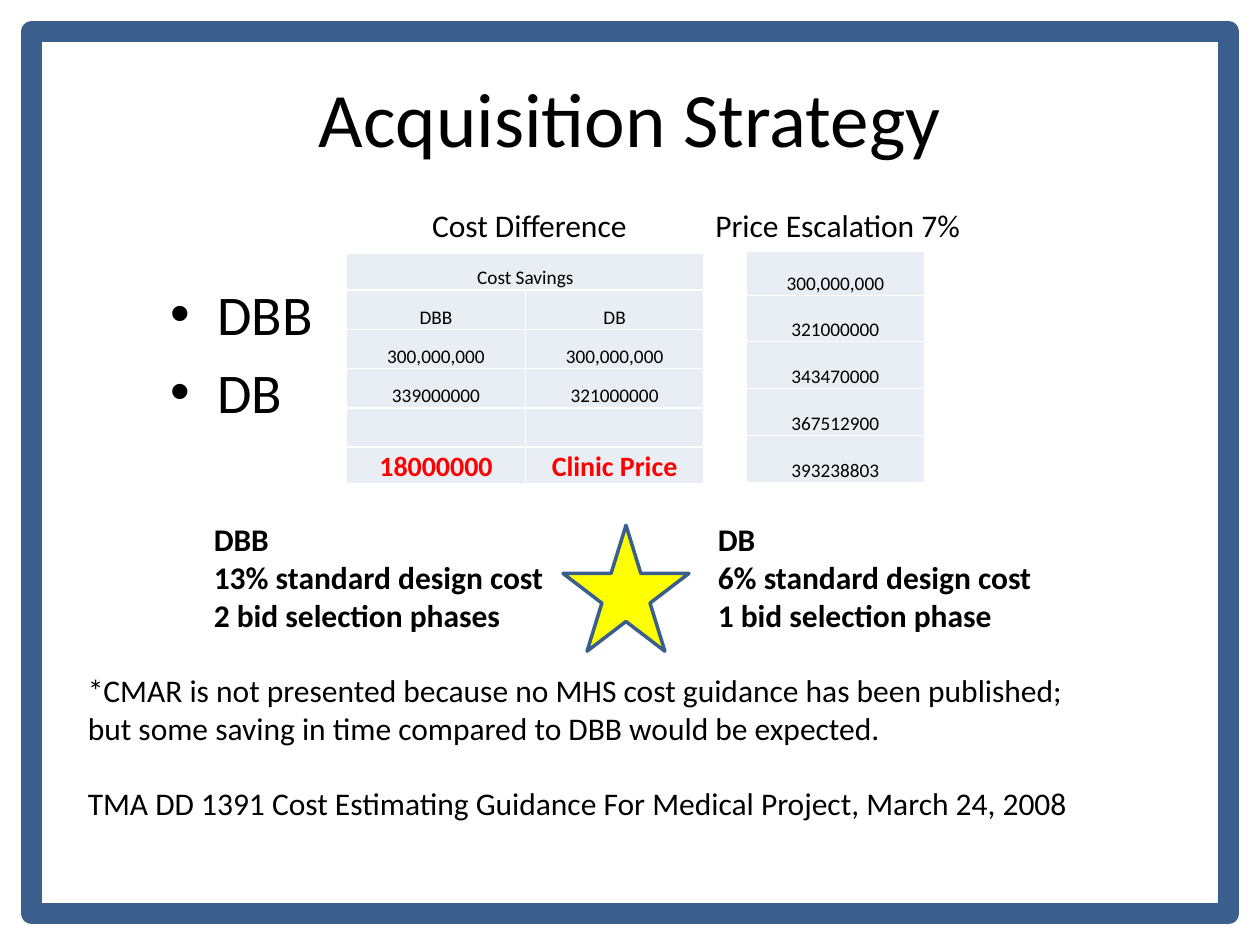
from dataclasses import dataclass

from lxml import etree
from pptx import Presentation
from pptx.dml.color import RGBColor
from pptx.enum.shapes import MSO_SHAPE
from pptx.enum.text import MSO_ANCHOR, PP_ALIGN
from pptx.oxml.ns import qn
from pptx.util import Cm, Pt

RECT, STAR = MSO_SHAPE.RECTANGLE, MSO_SHAPE.STAR_5_POINT
CENTER, LEFT = PP_ALIGN.CENTER, PP_ALIGN.LEFT
MIDDLE, BOTTOM = MSO_ANCHOR.MIDDLE, MSO_ANCHOR.BOTTOM
FONT = "Calibri"
BLACK, BLUE, YELLOW, RED = "000000", "3A5F8C", "FFFF00", "FF0000"
CELL_FILL = "E9EDF4"


@dataclass
class Box:
    left: float
    top: float
    width: float
    height: float

    def cm(self) -> tuple:
        return Cm(self.left), Cm(self.top), Cm(self.width), Cm(self.height)


@dataclass
class Line:
    text: str
    bold: bool = False
    before: float = 0


@dataclass
class Table:
    left: float
    top: float
    heights: list[float]
    rows: list[list[str]]


COLUMN_WIDTH = 3.6
COST = Table(6.99, 5.1, [0.75] + [0.79] * 4 + [0.75], [
    ["Cost Savings", ""],
    ["DBB", "DB"],
    ["300,000,000", "300,000,000"],
    ["339000000", "321000000"],
    ["", ""],
    ["18000000", "Clinic Price"],
])
ESCALATION = Table(15.04, 5.06, [0.9, 0.92, 0.95, 0.95, 0.95], [
    ["300,000,000"], ["321000000"], ["343470000"], ["367512900"], ["393238803"],
])
LABELS = [
    (Box(8.46, 4.02, 4.5, 1.02), "Cost Difference"),
    (Box(14.17, 4.02, 5.51, 1.02), "Price Escalation 7%"),
]
NOTE_TABS = (2.54, 12.7)
NOTES = [
    Line("\tDBB\tDB", True),
    Line("\t13% standard design cost\t6% standard design cost", True),
    Line("\t2 bid selection phases\t1 bid selection phase", True),
    Line("*CMAR is not presented because no MHS cost guidance has been published;", before=21.5),
    Line("but some saving in time compared to DBB would be expected."),
    Line("TMA DD 1391 Cost Estimating Guidance For Medical Project, March 24, 2008", before=21.5),
]


def rgb(color: str) -> RGBColor:
    return RGBColor.from_string(color)


def style(p, size: float, color: str = BLACK, bold: bool = False, align=LEFT) -> None:
    p.alignment = align
    for r in p.runs:
        r.font.name = FONT
        r.font.size = Pt(size)
        r.font.bold = bold
        r.font.color.rgb = rgb(color)


def add_text(s, box: Box, lines: list[Line], size: float, wrap: bool = False) -> list:
    """Add a text box and return its paragraphs."""
    tf = s.shapes.add_textbox(*box.cm()).text_frame
    tf.word_wrap = wrap
    tf.text = "\n".join(line.text for line in lines)
    for p, line in zip(tf.paragraphs, lines):
        style(p, size, bold=line.bold)
        p.space_before = Pt(line.before)
    return list(tf.paragraphs)


def add_bullet(p) -> None:
    pPr = p._p.get_or_add_pPr()
    pPr.set("marL", str(Cm(0.95)))
    pPr.set("indent", str(-Cm(0.95)))
    etree.SubElement(pPr, qn("a:buFont"), typeface="Arial")
    etree.SubElement(pPr, qn("a:buChar"), char="•")


def add_tabs(p, stops: tuple) -> None:
    tabs = etree.SubElement(p._p.get_or_add_pPr(), qn("a:tabLst"))
    for stop in stops:
        etree.SubElement(tabs, qn("a:tab"), pos=str(Cm(stop)), algn="l")


def add_shape(s, kind, box: Box, line_width: float, fill: str = "") -> None:
    sp = s.shapes.add_shape(kind, *box.cm())
    sp.shadow.inherit = False
    sp.line.color.rgb = rgb(BLUE)
    sp.line.width = Pt(line_width)
    if fill:
        sp.fill.solid()
        sp.fill.fore_color.rgb = rgb(fill)
    else:
        sp.fill.background()


def add_table(s, t: Table):
    cols = len(t.rows[0])
    box = Box(t.left, t.top, COLUMN_WIDTH * cols, sum(t.heights))
    table = s.shapes.add_table(len(t.rows), cols, *box.cm()).table
    table.first_row = table.horz_banding = False
    for column in table.columns:
        column.width = Cm(COLUMN_WIDTH)
    for row, height, texts in zip(table.rows, t.heights, t.rows):
        row.height = Cm(height)
        for cell, text in zip(row.cells, texts):
            cell.fill.solid()
            cell.fill.fore_color.rgb = rgb(CELL_FILL)
            cell.margin_left = cell.margin_right = cell.margin_top = Cm(0.02)
            cell.margin_bottom = 0
            cell.vertical_anchor = BOTTOM
            cell.text = text
            style(cell.text_frame.paragraphs[0], 11, align=CENTER)
    return table


def main() -> None:
    prs = Presentation()
    prs.slide_width, prs.slide_height = Cm(25.4), Cm(19.05)
    s = prs.slides.add_slide(prs.slide_layouts[5])
    add_shape(s, RECT, Box(0.64, 0.64, 24.13, 17.78), 12)

    title = s.shapes.title
    title.left, title.top, title.width, title.height = Box(1.27, 0.76, 22.86, 3.18).cm()
    title.text_frame.text = "Acquisition Strategy"
    title.text_frame.vertical_anchor = MIDDLE
    style(title.text_frame.paragraphs[0], 44, align=CENTER)

    methods = [Line("DBB", before=6.4), Line("DB", before=6.4)]
    for p in add_text(s, Box(3.18, 5.51, 19.69, 4.88), methods, 32, wrap=True):
        add_bullet(p)
    for p in add_text(s, Box(1.52, 10.36, 20.55, 7.19), NOTES, 18)[:3]:
        add_tabs(p, NOTE_TABS)

    cost = add_table(s, COST)
    cost.cell(0, 0).merge(cost.cell(0, 1))
    for cell in cost.rows[5].cells:
        style(cell.text_frame.paragraphs[0], 16, RED, True, CENTER)
    add_table(s, ESCALATION)

    for box, text in LABELS:
        add_text(s, box, [Line(text)], 18)
    add_shape(s, STAR, Box(11.35, 10.59, 2.54, 2.54), 2, YELLOW)
    prs.save("out.pptx")


if __name__ == "__main__":
    main()
